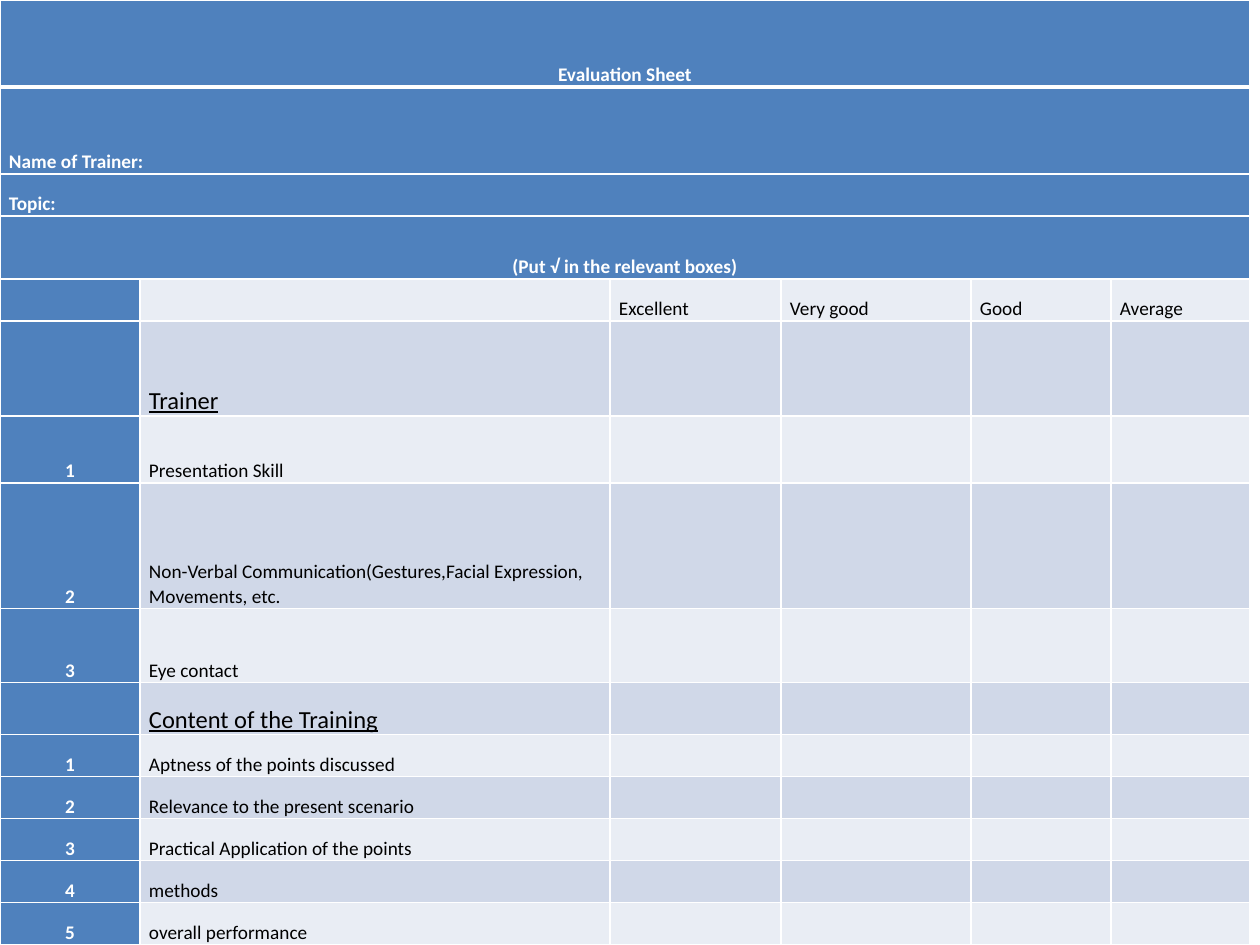
"""Build a one-slide trainer evaluation sheet as a full-page table."""
from lxml import etree
from pptx import Presentation
from pptx.dml.color import RGBColor
from pptx.enum.text import MSO_ANCHOR, PP_ALIGN
from pptx.oxml.ns import qn
from pptx.util import Pt

BOTTOM = MSO_ANCHOR.BOTTOM
CENTER, LEFT = PP_ALIGN.CENTER, PP_ALIGN.LEFT
PX = 914400 // 126
BLUE, WHITE, BLACK = "4F81BD", "FFFFFF", "000000"
BANDS = ["E9EDF4", "D0D8E8"]

COLUMN_WIDTHS = [140, 470, 171, 190, 140, 139]
ROW_HEIGHTS = [87, 87, 42, 63, 42, 95, 67, 126, 74, 52, 42, 42, 42, 42, 42]
BANNERS = [
    ("Evaluation Sheet", CENTER),
    ("Name of Trainer:", LEFT),
    ("Topic:", LEFT),
    ("(Put √ in the relevant boxes)", CENTER),
]
SECTIONS = {
    "Trainer": [
        "Presentation Skill",
        "Non-Verbal Communication(Gestures,Facial Expression, Movements, etc.",
        "Eye contact",
    ],
    "Content of the Training": [
        "Aptness of the points discussed",
        "Relevance to the present scenario",
        "Practical Application of the points",
        "methods",
        "overall performance",
    ],
}


def color(value):
    return RGBColor.from_string(value)


def format_cell(cell, text, fill, align=LEFT, heading=False, top=1, bottom=1):
    properties = cell._tc.get_or_add_tcPr()
    for side, width in (("L", 1), ("R", 1), ("T", top), ("B", bottom)):
        line = etree.SubElement(properties, qn(f"a:ln{side}"), w=str(Pt(width)))
        solid = etree.SubElement(line, qn("a:solidFill"))
        etree.SubElement(solid, qn("a:srgbClr"), val=WHITE)
    cell.fill.solid()
    cell.fill.fore_color.rgb = color(fill)
    cell.vertical_anchor = BOTTOM
    cell.margin_left = cell.margin_right = 9 * PX
    cell.margin_top = cell.margin_bottom = 0
    cell.text = text
    paragraph = cell.text_frame.paragraphs[0]
    paragraph.alignment = align
    paragraph.line_spacing = 1.07
    font = paragraph.font
    font.name = "Calibri"
    font.size = Pt(14 if heading else 11)
    font.bold = fill == BLUE
    font.underline = heading
    font.color.rgb = color(WHITE if fill == BLUE else BLACK)


presentation = Presentation()
presentation.slide_width = 1260 * PX
presentation.slide_height = 945 * PX
slide = presentation.slides.add_slide(presentation.slide_layouts[6])

table = slide.shapes.add_table(
    len(ROW_HEIGHTS), len(COLUMN_WIDTHS), 0, 0,
    sum(COLUMN_WIDTHS) * PX, sum(ROW_HEIGHTS) * PX,
).table
table.first_col = True
for column, width in zip(table.columns, COLUMN_WIDTHS):
    column.width = width * PX
for row, height in zip(table.rows, ROW_HEIGHTS):
    row.height = height * PX

for index, (text, align) in enumerate(BANNERS):
    cells = list(table.rows[index].cells)
    cells[0].merge(cells[-1])
    for position, cell in enumerate(cells):
        format_cell(cell, "" if position else text, BLUE, align,
                    top=3 if index == 1 else 1, bottom=3 if index == 0 else 1)

body = [["", "", "Excellent", "Very good", "Good", "Average"]]
for section, criteria in SECTIONS.items():
    body.append(["", section] + [""] * 4)
    for number, criterion in enumerate(criteria, 1):
        body.append([str(number), criterion] + [""] * 4)

for index, texts in enumerate(body):
    for position, text in enumerate(texts):
        first = position == 0
        format_cell(table.cell(len(BANNERS) + index, position), text,
                    BLUE if first else BANDS[index % 2],
                    CENTER if first else LEFT, heading=text in SECTIONS)

presentation.save("out.pptx")
